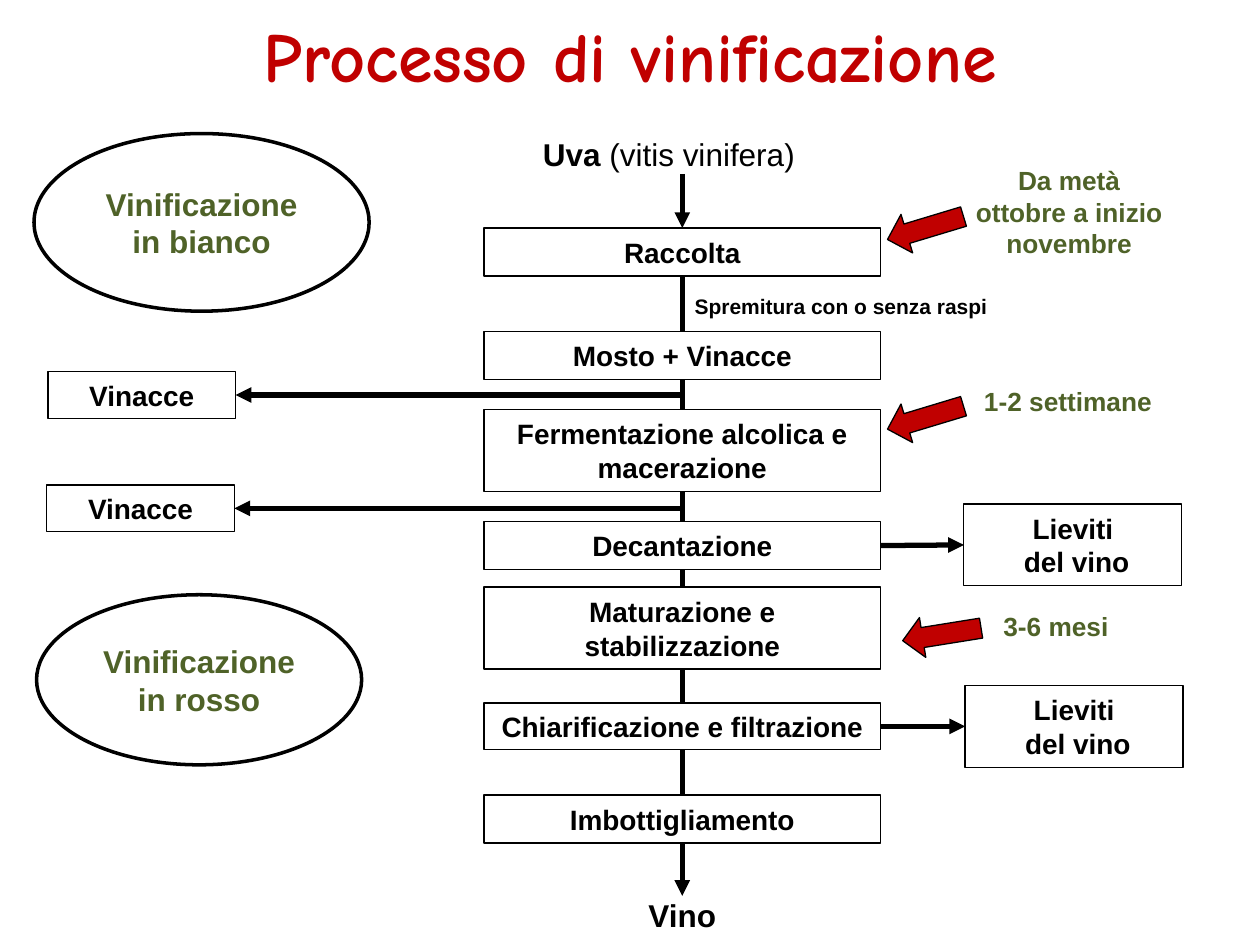
from lxml import etree
from pptx import Presentation
from pptx.dml.color import RGBColor
from pptx.enum.shapes import MSO_CONNECTOR, MSO_SHAPE
from pptx.enum.text import MSO_ANCHOR, MSO_AUTO_SIZE, PP_ALIGN
from pptx.oxml.ns import qn
from pptx.util import Inches, Pt

BLACK = RGBColor(0x00, 0x00, 0x00)
WHITE = RGBColor(0xFF, 0xFF, 0xFF)
RED = RGBColor(0xC0, 0x00, 0x00)
GREEN = RGBColor(0x4F, 0x62, 0x28)
RECT, OVAL, ARROW = MSO_SHAPE.RECTANGLE, MSO_SHAPE.OVAL, MSO_SHAPE.RIGHT_ARROW
STRAIGHT = MSO_CONNECTOR.STRAIGHT
MIDDLE, CENTER, LEFT = MSO_ANCHOR.MIDDLE, PP_ALIGN.CENTER, PP_ALIGN.LEFT
NO_FIT = MSO_AUTO_SIZE.NONE
TOP, LEFT_SIDE, BOTTOM, RIGHT_SIDE = range(4)

WIDTH, HEIGHT = Inches(10), Inches(7.5)
COLS, ROWS = 100, 75
TITLE = dict(name="Comic Neue", size=Pt(40), bold=True)
STEP = dict(name="Arial", size=Pt(16), bold=True)
LARGE = dict(STEP, size=Pt(18))
PLAIN = dict(LARGE, bold=False)
NOTE = dict(STEP, size=Pt(12))
TIME = dict(STEP, size=Pt(15))

STEPS = [
    ("Raccolta", 7.9, 3.8),
    ("Mosto + Vinacce", 16.1, 3.8),
    ("Fermentazione alcolica e macerazione", 22.3, 6.5),
    ("Decantazione", 31.2, 3.8),
    ("Maturazione e stabilizzazione", 36.4, 6.5),
    ("Chiarificazione e filtrazione", 45.6, 3.7),
    ("Imbottigliamento", 52.9, 3.8),
]
POMACE = [(3.8, 29.5, 14.9, 3.7), (3.7, 38.5, 14.9, 3.7)]
YEASTS = [("Decantazione", (76.5, 40, 17.3, 6.5)),
          ("Chiarificazione e filtrazione", (76.6, 54.4, 17.3, 6.5))]
TIMINGS = [
    ("Da metà ottobre a inizio novembre", (70.3, 12.5, 23.2, 8.6), 5.9, 1.3, 163.2),
    ("1-2 settimane", (70.3, 30.1, 23.5, 3.5), 5.4, 1.3, 163.2),
    ("3-6 mesi", (71.6, 47.9, 18.1, 3.5), 6.3, 0.7, 170.9),
]
METHODS = [("Vinificazione in bianco", (2.7, 10.6, 26.6, 14.1)),
           ("Vinificazione in rosso", (2.9, 47.2, 25.8, 13.5))]


def grid(x, y):
    """Turn a column and a row into slide lengths."""
    return int(WIDTH * x / COLS), int(HEIGHT * y / ROWS)


def write(sp, runs, color, align=CENTER):
    """Fill a shape with one paragraph of formatted runs."""
    tf = sp.text_frame
    tf.word_wrap, tf.auto_size, tf.vertical_anchor = True, NO_FIT, MIDDLE
    p = tf.paragraphs[0]
    p.alignment = align
    for i, (text, font) in enumerate(runs):
        for j, line in enumerate(text.split("\n")):
            if j:
                p.add_line_break()
            r = p.add_run()
            r.text = line
            for key, value in font.items():
                setattr(r.font, key, value)
            r.font.color.rgb = color


def add_label(s, box, runs, color=BLACK, align=CENTER):
    """Add a text box in the given grid box."""
    sp = s.shapes.add_textbox(*grid(*box[:2]), *grid(*box[2:]))
    write(sp, runs, color, align)
    return sp


def add_outline(s, kind, box, fill=WHITE, weight=0.75):
    """Add a filled preset shape with a black outline."""
    sp = s.shapes.add_shape(kind, *grid(*box[:2]), *grid(*box[2:]))
    sp.shadow.inherit = False
    sp.fill.solid()
    sp.fill.fore_color.rgb = fill
    sp.line.color.rgb = BLACK
    sp.line.width = Pt(weight)
    return sp


def add_step(s, box, text):
    """Add a bordered box that holds one stage or product."""
    sp = add_outline(s, RECT, box)
    write(sp, [(text, STEP)], BLACK)
    return sp


def add_line(s, start, end, source=None, target=None, head=True):
    """Draw a thick line and join it to any (shape, side) given."""
    c = s.shapes.add_connector(STRAIGHT, *grid(*start), *grid(*end))
    if source:
        c.begin_connect(*source)
    if target:
        c.end_connect(*target)
    c.line.color.rgb = BLACK
    c.line.width = Pt(3)
    if head:
        etree.SubElement(c.line._get_or_add_ln(), qn("a:tailEnd"), type="triangle")
    etree.SubElement(c._element.spPr, qn("a:effectLst"))


def add_title(s, box):
    """Place and format the slide title."""
    sp = s.shapes.title
    sp.left, sp.top = grid(*box[:2])
    sp.width, sp.height = grid(*box[2:])
    write(sp, [("Processo di vinificazione", TITLE)], RED)


def add_flow(s, box):
    """Build the central column from grape to wine and return its steps."""
    x, y, w, h = box
    mid = x + w / 2
    add_label(s, (x + 3.7, y, w - 4, 4), [("Uva ", LARGE), ("(vitis vinifera)", PLAIN)], align=LEFT)
    steps = {text: add_step(s, (x, y + top, w, high), text) for text, top, high in STEPS}
    chain = list(steps.values())
    add_line(s, (mid, y + 3.6), (mid, y + 7.9), target=(chain[0], TOP))
    for upper, lower in zip(chain, chain[1:]):
        add_line(s, (mid, y), (mid, y), (upper, BOTTOM), (lower, TOP), head=False)
    add_label(s, (mid, y + 12.6, 27.6, 3), [("Spremitura con o senza raspi", NOTE)], align=LEFT)
    add_label(s, (mid - 7.8, y + h - 4.7, 15.6, 4.7), [("Vino", LARGE)])
    add_line(s, (mid, y), (mid, y + h - 3.9), source=(chain[-1], BOTTOM))
    return steps


def add_pomace(s, box, spine):
    """Add a discarded pomace box fed from the central column."""
    x, y, w, h = box
    sp = add_step(s, box, "Vinacce")
    add_line(s, (spine, y + h / 2), (x + w, y + h / 2), target=(sp, RIGHT_SIDE))


def add_yeast(s, box, step):
    """Add a yeast box fed from the right side of a step."""
    sp = add_step(s, box, "Lieviti\n del vino")
    add_line(s, box[:2], box[:2], (step, RIGHT_SIDE), (sp, LEFT_SIDE))


def add_timing(s, box, text, indent, drop, angle):
    """Add a duration with a red arrow on its left."""
    x, y, w, h = box
    sp = add_outline(s, ARROW, (x, y + h / 2 + drop - 1.6, 6.3, 3.2), RED)
    sp.rotation = angle
    add_label(s, (x + indent, y, w - indent, h), [(text, TIME)], GREEN)


def add_method(s, box, text):
    """Add an oval that names a winemaking method."""
    write(add_outline(s, OVAL, box, weight=2), [(text, LARGE)], GREEN)


def main():
    """Build the slide and save it."""
    prs = Presentation()
    prs.slide_width, prs.slide_height = WIDTH, HEIGHT
    s = prs.slides.add_slide(prs.slide_layouts[5])
    add_title(s, (0, 0, COLS, 8.6))
    flow = (38.4, 10.2, 31.5, 64.8)
    steps = add_flow(s, flow)
    for box in POMACE:
        add_pomace(s, box, flow[0] + flow[2] / 2)
    for name, box in YEASTS:
        add_yeast(s, box, steps[name])
    for text, box, indent, drop, angle in TIMINGS:
        add_timing(s, box, text, indent, drop, angle)
    for text, box in METHODS:
        add_method(s, box, text)
    prs.save("out.pptx")


if __name__ == "__main__":
    main()
